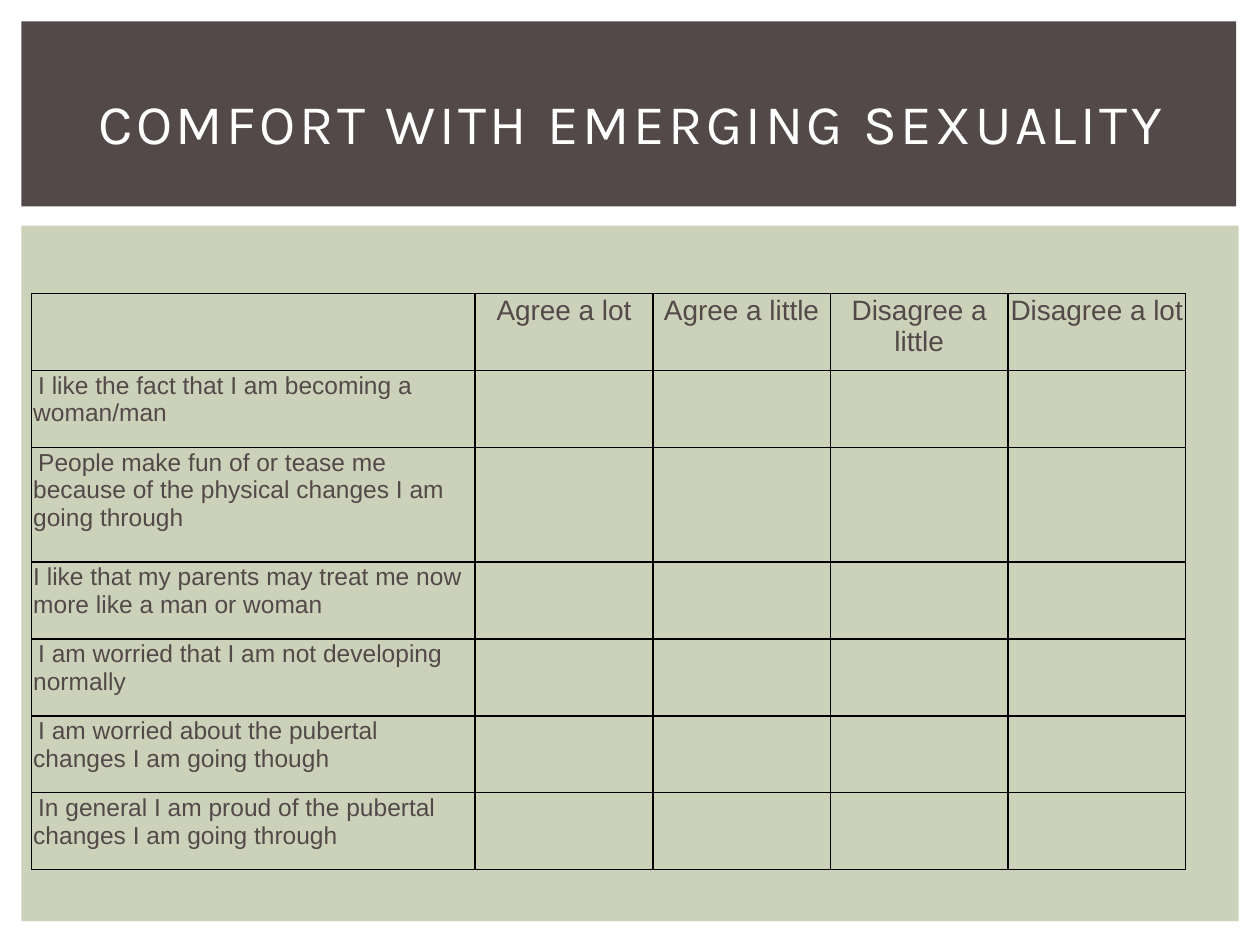
import pptx
import pptx.dml.color
import pptx.enum.shapes
import pptx.enum.text
import pptx.oxml
import pptx.oxml.ns
import pptx.util
from pptx.util import Cm, Pt

TITLE = "COMFORT WITH EMERGING SEXUALITY"
ANSWERS = ["Agree a lot", "Agree a little", "Disagree a little", "Disagree a lot"]
STATEMENTS = [
    ("I like the fact that I am becoming a woman/man", True),
    ("People make fun of or tease me because of the physical changes I am going through", True),
    ("I like that my parents may treat me now more like a man or woman", False),
    ("I am worried that I am not developing normally", True),
    ("I am worried about the pubertal changes I am going though", True),
    ("In general I am proud of the pubertal changes I am going through", True),
]
BROWN, SAGE, WHITE, BLACK = "534949", "CCD1B9", "FFFFFF", "000000"
PANELS = [
    (SAGE, 0.43, 4.55, 24.54, 14.02),
    (BROWN, 0.43, 0.43, 24.49, 3.73),
]
STATEMENT_WIDTH, ANSWER_WIDTH = 8.94, 3.58
ROW_HEIGHT, TALL_ROW_HEIGHT, TALL_ROW = 1.55, 2.31, 2
FIRST_LINE_INDENT = 0.1


def color(value):
    return pptx.dml.color.RGBColor.from_string(value)


def add_panel(page, fill, *place):
    panel = page.shapes.add_shape(
        pptx.enum.shapes.MSO_SHAPE.RECTANGLE, *map(Cm, place))
    panel.shadow.inherit = False
    panel.fill.solid()
    panel.fill.fore_color.rgb = color(fill)
    panel.line.fill.background()


def format_title(title):
    title.left, title.top, title.width, title.height = map(Cm, (1.07, 1, 23.3, 2.92))
    title.text_frame.text = TITLE
    title.text_frame.vertical_anchor = pptx.enum.text.MSO_ANCHOR.MIDDLE
    para = title.text_frame.paragraphs[0]
    para.alignment = pptx.enum.text.PP_ALIGN.CENTER
    para.font.name, para.font.size = "Karla", Pt(32)
    para.font.color.rgb = color(WHITE)
    para.runs[0].font._element.set("spc", "200")


def format_cell(cell):
    properties = cell._tc.get_or_add_tcPr()
    for side in ("lnL", "lnR", "lnT", "lnB"):
        properties.append(pptx.oxml.parse_xml(
            f'<a:{side} {pptx.oxml.ns.nsdecls("a")} w="{Pt(1)}"><a:solidFill>'
            f'<a:srgbClr val="{BLACK}"/></a:solidFill></a:{side}>'))
    cell.fill.background()
    cell.margin_left = cell.margin_right = cell.margin_top = Cm(0.03)
    cell.margin_bottom = 0


def write_cell(cell, text, size):
    cell.text = text
    para = cell.text_frame.paragraphs[0]
    para.font.name, para.font.size = "Arial", Pt(size)
    para.font.color.rgb = color(BROWN)
    return para


def add_survey(page):
    widths = [STATEMENT_WIDTH] + [ANSWER_WIDTH] * len(ANSWERS)
    heights = [ROW_HEIGHT] * (len(STATEMENTS) + 1)
    heights[TALL_ROW] = TALL_ROW_HEIGHT
    table = page.shapes.add_table(
        len(heights), len(widths), Cm(0.64), Cm(5.92),
        Cm(sum(widths)), Cm(sum(heights))).table
    table.first_row = table.horz_banding = False
    for column, width in zip(table.columns, widths):
        column.width = Cm(width)
    for row, height in zip(table.rows, heights):
        row.height = Cm(height)
    for cell in table.iter_cells():
        format_cell(cell)
    for index, answer in enumerate(ANSWERS, 1):
        para = write_cell(table.cell(0, index), answer, 16)
        para.alignment = pptx.enum.text.PP_ALIGN.CENTER
    for index, (statement, indented) in enumerate(STATEMENTS, 1):
        para = write_cell(table.cell(index, 0), statement, 14)
        if indented:
            para._p.get_or_add_pPr().set("indent", str(Cm(FIRST_LINE_INDENT)))


def main():
    deck = pptx.Presentation()
    deck.slide_width, deck.slide_height = Cm(25.4), Cm(19.05)
    page = deck.slides.add_slide(deck.slide_layouts[5])
    title = page.shapes.title
    format_title(title)
    for panel in PANELS:
        add_panel(page, *panel)
    add_survey(page)
    page.shapes[-1].element.addnext(title.element)
    deck.save("out.pptx")


if __name__ == "__main__":
    main()
